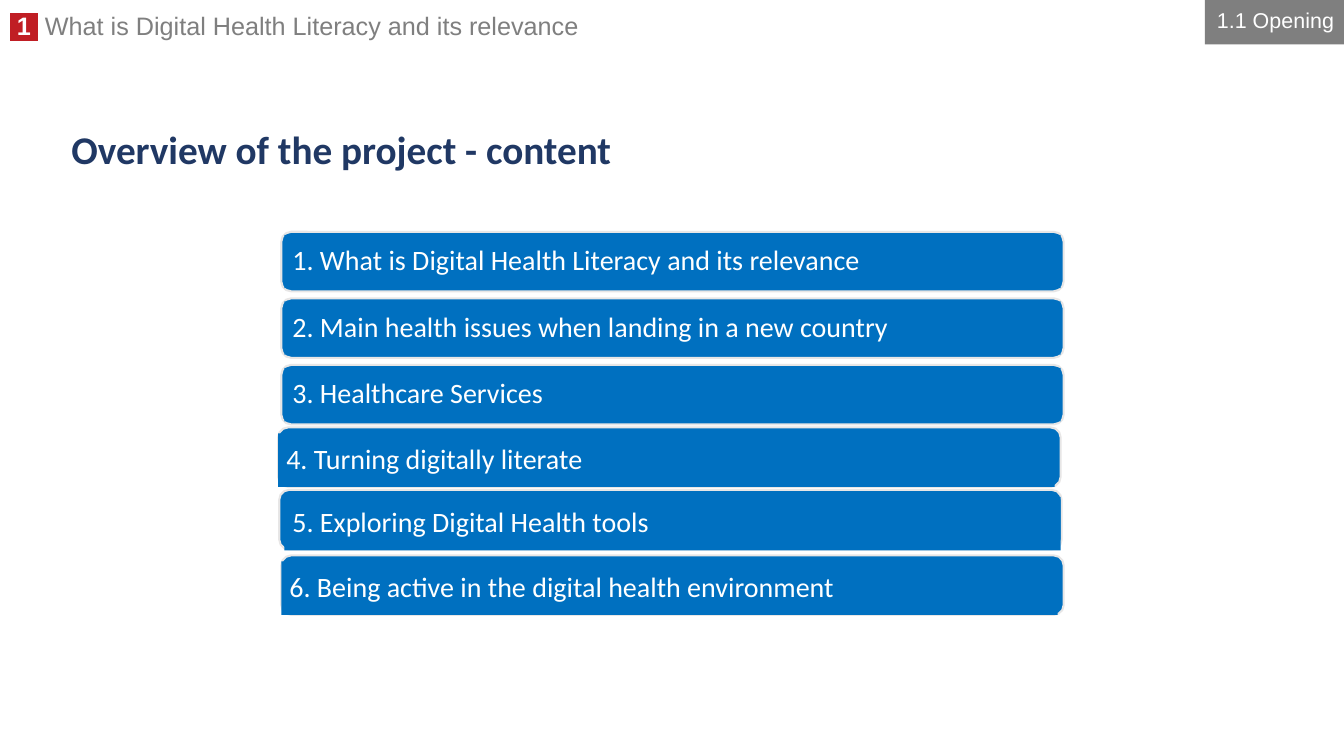
from dataclasses import dataclass

from lxml.etree import SubElement
from pptx import Presentation
from pptx.dml.color import RGBColor
from pptx.enum.shapes import MSO_SHAPE as Shape
from pptx.enum.text import MSO_ANCHOR as Anchor, PP_ALIGN as Align
from pptx.oxml.ns import qn
from pptx.util import Emu, Pt

PX = 9144
COLORS = {
    "white": "FFFFFF",
    "gray": "7F7F7F",
    "red": "C01E24",
    "navy": "203864",
    "blue": "0070C0",
    "border": "E7E6E6",
}


@dataclass
class Box:
    left: int
    top: int
    width: int
    height: int

    def emu(self) -> list[Emu]:
        return [Emu(v * PX) for v in (self.left, self.top, self.width, self.height)]


@dataclass
class Topic:
    text: str
    left: int
    top: int
    label_dx: int
    label_dy: int


TOPICS = [
    Topic("What is Digital Health Literacy and its relevance", 279, 230, 3, 3),
    Topic("Main health issues when landing in a new country", 279, 296, 3, 3),
    Topic("Healthcare Services", 279, 362, 3, 3),
    Topic("Turning digitally literate", 276, 424, 0, 6),
    Topic("Exploring Digital Health tools", 277, 486, 5, 7),
    Topic("Being active in the digital health environment", 279, 551, 0, 6),
]


def rgb(name: str) -> RGBColor:
    return RGBColor.from_string(COLORS[name])


def add_block(shapes, kind: Shape, box: Box, fill: str, line: str | None = None):
    sp = shapes.add_shape(kind, *box.emu())
    sp.shadow.inherit = False
    sp.fill.solid()
    sp.fill.fore_color.rgb = rgb(fill)
    if line:
        sp.line.color.rgb = rgb(line)
        sp.line.width = Pt(1.5)
    else:
        sp.line.fill.background()
    return sp


def write(sp, text: str, size: float, font: str, color: str, spacing: float = 0.9,
          bold: bool = False, align: Align = Align.LEFT) -> None:
    tf = sp.text_frame
    tf.word_wrap = True
    tf.vertical_anchor = Anchor.MIDDLE
    p = tf.paragraphs[0]
    p.text = text
    p.alignment = align
    p.line_spacing = spacing
    p.font.name = font
    p.font.size = Pt(size)
    p.font.bold = bold
    p.font.color.rgb = rgb(color)


def add_header(shapes) -> None:
    tf = shapes.add_textbox(*Box(0, 11, 952, 35).emu()).text_frame
    tf.word_wrap = True
    p = tf.paragraphs[0]
    p.line_spacing = 0.8
    p.font.name = "Arial"
    p.font.size = Pt(18)
    number = p.add_run()
    number.text = " 1 "
    number.font.bold = True
    number.font.color.rgb = rgb("white")
    highlight = SubElement(number.font._element, qn("a:highlight"))
    SubElement(highlight, qn("a:srgbClr"), val=COLORS["red"])
    chapter = p.add_run()
    chapter.text = " What is Digital Health Literacy and its relevance"
    chapter.font.color.rgb = rgb("gray")


def add_topic(shapes, number: int, topic: Topic) -> None:
    add_block(shapes, Shape.ROUNDED_RECTANGLE,
              Box(topic.left, topic.top, 776, 59), "blue", "border")
    label = add_block(shapes, Shape.RECTANGLE,
                      Box(topic.left + topic.label_dx, topic.top + topic.label_dy, 770, 53),
                      "blue")
    tf = label.text_frame
    tf.margin_left = tf.margin_right = tf.margin_top = tf.margin_bottom = Emu(8 * PX)
    write(label, f"{number}. {topic.text}", 20, "Calibri", "white")


def main() -> None:
    prs = Presentation()
    prs.slide_width, prs.slide_height = Emu(1333 * PX), Emu(750 * PX)
    s = prs.slides.add_slide(prs.slide_layouts[6])
    add_header(s.shapes)
    topics = s.shapes.add_group_shape()
    for number, topic in enumerate(TOPICS, 1):
        add_topic(topics.shapes, number, topic)
    title = s.shapes.add_textbox(*Box(61, 118, 1210, 66).emu())
    write(title, "Overview of the project - content", 28, "Calibri", "navy", bold=True)
    section = add_block(s.shapes, Shape.RECTANGLE, Box(1195, 0, 138, 44), "gray")
    write(section, "1.1 Opening", 15.3, "Arial", "white", 0.8, align=Align.RIGHT)
    prs.save("out.pptx")


if __name__ == "__main__":
    main()
